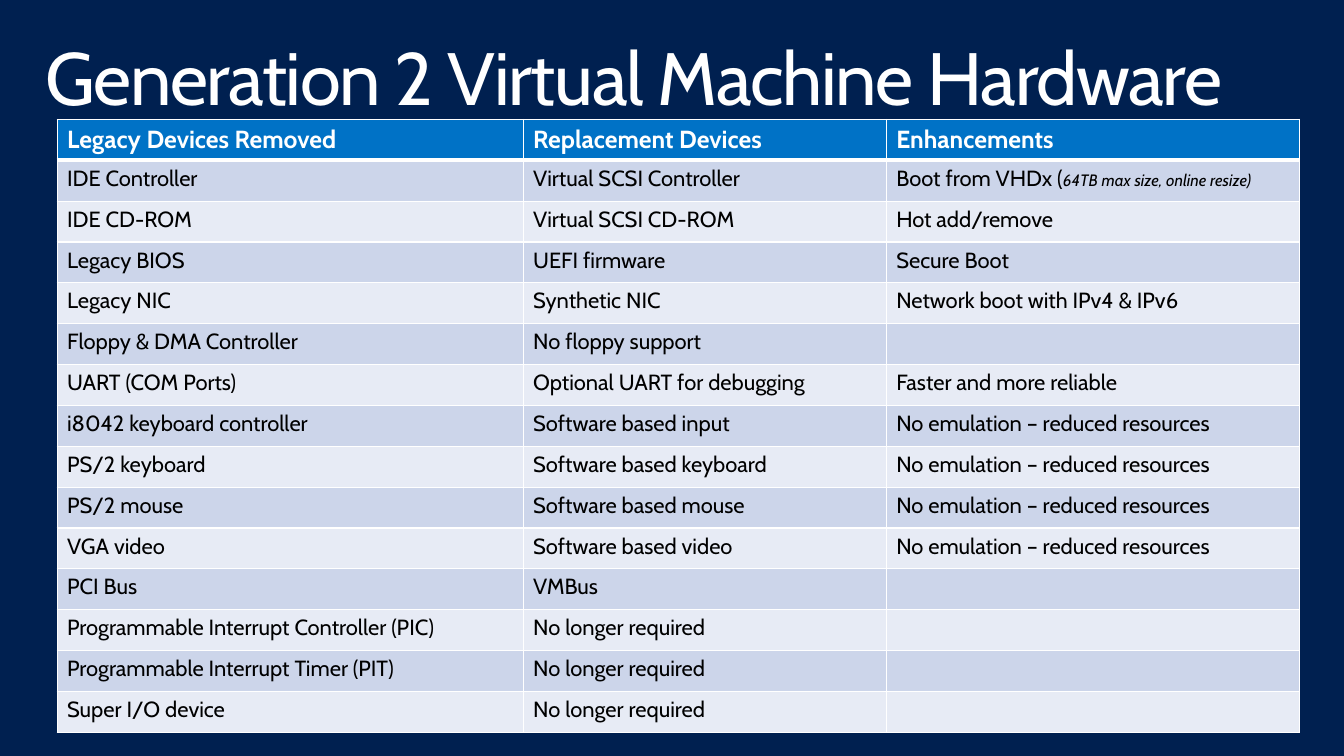
from lxml import etree
from pptx import Presentation
from pptx.dml.color import RGBColor
from pptx.oxml import ns
from pptx.util import Cm, Pt

TITLE = "Generation 2 Virtual Machine Hardware"
HEADERS = ("Legacy Devices Removed", "Replacement Devices", "Enhancements")
REDUCED = "No emulation – reduced resources"
NOT_REQUIRED = "No longer required"
BOOT_NOTE = "64TB max size, online resize)"
DEVICES = [
    ("IDE Controller", "Virtual SCSI Controller", "Boot from VHDx ("),
    ("IDE CD-ROM", "Virtual SCSI CD-ROM", "Hot add/remove"),
    ("Legacy BIOS", "UEFI firmware", "Secure Boot"),
    ("Legacy NIC", "Synthetic NIC", "Network boot with IPv4 & IPv6"),
    ("Floppy & DMA Controller", "No floppy support", ""),
    ("UART (COM Ports)", "Optional UART for debugging", "Faster and more reliable"),
    ("i8042 keyboard controller", "Software based input", REDUCED),
    ("PS/2 keyboard", "Software based keyboard", REDUCED),
    ("PS/2 mouse", "Software based mouse", REDUCED),
    ("VGA video", "Software based video", REDUCED),
    ("PCI Bus", "VMBus", ""),
    ("Programmable Interrupt Controller (PIC)", NOT_REQUIRED, ""),
    ("Programmable Interrupt Timer (PIT)", NOT_REQUIRED, ""),
    ("Super I/O device", NOT_REQUIRED, ""),
]
COL_WIDTHS = (11.98, 9.33, 10.62)
ROW_HEIGHT = 1.05

FONT = "Cabin"
NAVY = RGBColor(0x00, 0x20, 0x50)
BLUE = RGBColor(0x00, 0x72, 0xC6)
BAND_DARK = RGBColor(0xCC, 0xD5, 0xEA)
BAND_LIGHT = RGBColor(0xE7, 0xEB, 0xF5)
WHITE = RGBColor(0xFF, 0xFF, 0xFF)
BLACK = RGBColor(0x00, 0x00, 0x00)


def add_text(p, text, size=16, color=BLACK, bold=False, italic=False):
    r = p.add_run()
    r.text = text
    r.font.name = FONT
    r.font.size = Pt(size)
    r.font.color.rgb = color
    r.font.bold = bold
    r.font.italic = italic
    return r


def set_borders(cell, top=1, bottom=1):
    """Draw white cell borders; widths are in points."""
    tc_pr = cell._tc.get_or_add_tcPr()
    widths = {"lnL": 1, "lnR": 1, "lnT": top, "lnB": bottom}
    for i, (side, width) in enumerate(widths.items()):
        ln = etree.Element(ns.qn("a:" + side), w=str(Pt(width)))
        fill = etree.SubElement(ln, ns.qn("a:solidFill"))
        etree.SubElement(fill, ns.qn("a:srgbClr"), val=str(WHITE))
        tc_pr.insert(i, ln)


def add_title(s):
    tf = s.shapes.add_textbox(Cm(0.76), Cm(0.81), Cm(33.02), Cm(2.54)).text_frame
    tf.word_wrap = True
    tf.margin_left = tf.margin_right = Cm(0.41)
    tf.margin_top = tf.margin_bottom = Cm(0.25)
    p = tf.paragraphs[0]
    p.line_spacing = 0.9
    r = add_text(p, TITLE, size=54, color=WHITE)
    r.font._element.set("spc", "-100")


def add_device_table(s):
    rows = [HEADERS] + DEVICES
    table = s.shapes.add_table(
        len(rows), len(HEADERS), Cm(1.47), Cm(3.07),
        Cm(sum(COL_WIDTHS)), Cm(ROW_HEIGHT * len(rows))).table
    table.first_row = table.horz_banding = False
    for column, width in zip(table.columns, COL_WIDTHS):
        column.width = Cm(width)
    for i, row in enumerate(rows):
        table.rows[i].height = Cm(ROW_HEIGHT)
        header = i == 0
        band = BAND_DARK if i % 2 else BAND_LIGHT
        for j, text in enumerate(row):
            cell = table.cell(i, j)
            cell.fill.solid()
            cell.fill.fore_color.rgb = BLUE if header else band
            set_borders(cell, top=3 if i == 1 else 1, bottom=3 if header else 1)
            if header:
                add_text(cell.text_frame.paragraphs[0], text, size=18, color=WHITE, bold=True)
            elif text:
                add_text(cell.text_frame.paragraphs[0], text)
    boot_cell = table.cell(1, 2)
    add_text(boot_cell.text_frame.paragraphs[0], BOOT_NOTE, size=12, italic=True)


def main():
    prs = Presentation()
    prs.slide_width, prs.slide_height = Cm(34.54), Cm(19.43)
    s = prs.slides.add_slide(prs.slide_layouts[6])
    s.background.fill.solid()
    s.background.fill.fore_color.rgb = NAVY
    add_title(s)
    add_device_table(s)
    prs.save("out.pptx")


if __name__ == "__main__":
    main()
